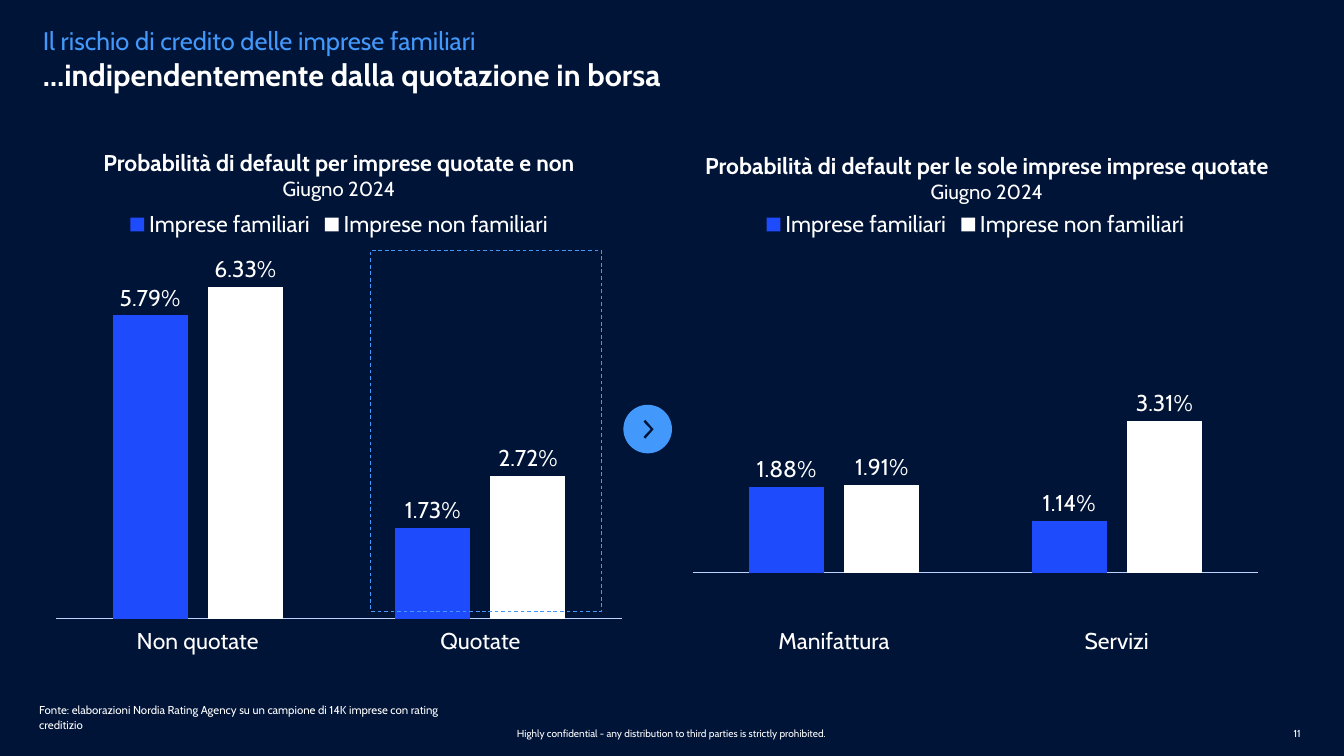
from pptx import Presentation
from pptx.chart.data import CategoryChartData
from pptx.dml.color import RGBColor
from pptx.enum.chart import (XL_CHART_TYPE, XL_LABEL_POSITION, XL_LEGEND_POSITION,
                             XL_TICK_LABEL_POSITION, XL_TICK_MARK)
from pptx.enum.dml import MSO_LINE
from pptx.enum.shapes import MSO_SHAPE
from pptx.enum.text import MSO_ANCHOR, MSO_AUTO_SIZE, PP_ALIGN
from pptx.util import Cm, Pt

NAVY = RGBColor(0x00, 0x14, 0x37)
SKY = RGBColor(0x43, 0x99, 0xFB)
BLUE = RGBColor(0x1E, 0x4C, 0xFC)
PALE = RGBColor(0xBB, 0xD4, 0xFF)
WHITE = RGBColor(0xFF, 0xFF, 0xFF)
FONT = "Cabin"
CHART_TOP, CHART_WIDTH, CHART_HEIGHT = 5.54, 16.36, 12.93


def style(font, size, color=WHITE, bold=False):
    font.name = FONT
    font.size = Pt(size)
    font.bold = bold
    font.color.rgb = color


def place(shape, left, top, width, height):
    shape.left, shape.top = Cm(left), Cm(top)
    shape.width, shape.height = Cm(width), Cm(height)


def clear_margins(frame):
    frame.margin_left = frame.margin_right = 0
    frame.margin_top = frame.margin_bottom = 0


def add_text(slide, box, text, sizes, color=WHITE, align=PP_ALIGN.LEFT,
             anchor=MSO_ANCHOR.TOP, inset=False, spacing=None):
    """Write one paragraph per size; the first of several is bold."""
    frame = slide.shapes.add_textbox(*map(Cm, box)).text_frame
    frame.word_wrap = True
    frame.vertical_anchor = anchor
    if not inset:
        clear_margins(frame)
    frame.text = text
    for index, (paragraph, size) in enumerate(zip(frame.paragraphs, sizes)):
        paragraph.alignment = align
        paragraph.line_spacing = spacing
        style(paragraph.runs[0].font, size, color, len(sizes) > 1 and index == 0)


def add_title(slide, text):
    title = slide.shapes.title
    place(title, 1.19, 1.55, 25, 0.89)
    frame = title.text_frame
    frame.text = text
    frame.word_wrap = False
    frame.auto_size = MSO_AUTO_SIZE.NONE
    frame.vertical_anchor = MSO_ANCHOR.TOP
    clear_margins(frame)
    frame.paragraphs[0].alignment = PP_ALIGN.LEFT
    style(frame.paragraphs[0].runs[0].font, 24, bold=True)


def add_columns(slide, left, groups, family, others, low):
    data = CategoryChartData(number_format="0.00%")
    data.categories = groups
    data.add_series("Imprese familiari", family)
    data.add_series("Imprese non familiari", others)
    chart = slide.shapes.add_chart(
        XL_CHART_TYPE.COLUMN_CLUSTERED, Cm(left), Cm(CHART_TOP),
        Cm(CHART_WIDTH), Cm(CHART_HEIGHT), data).chart
    style(chart.font, 18)
    chart.has_title = False
    chart.has_legend = True
    chart.legend.position = XL_LEGEND_POSITION.TOP
    chart.legend.include_in_layout = False
    style(chart.legend.font, 18)

    value = chart.value_axis
    value.minimum_scale, value.maximum_scale = low, 0.07
    value.has_major_gridlines = False
    value.visible = False
    category = chart.category_axis
    category.major_tick_mark = XL_TICK_MARK.NONE
    category.tick_label_position = XL_TICK_LABEL_POSITION.LOW
    category.format.line.color.rgb = PALE
    category.format.line.width = Pt(0.75)
    style(category.tick_labels.font, 18)

    plot = chart.plots[0]
    plot.gap_width, plot.overlap = 150, -27
    plot.vary_by_categories = False
    for series, color in zip(plot.series, (BLUE, WHITE)):
        series.invert_if_negative = False
        series.format.fill.solid()
        series.format.fill.fore_color.rgb = color
        labels = series.data_labels
        labels.show_value = True
        labels.position = XL_LABEL_POSITION.OUTSIDE_END
        labels.number_format = "0.00%"
        labels.number_format_is_linked = False
        style(labels.font, 18)


def fill_plain(shape, color):
    shape.shadow.inherit = False
    shape.fill.solid()
    shape.fill.fore_color.rgb = color
    shape.line.fill.background()


def add_arrow(slide):
    """Draw the round badge with its chevron pointing right."""
    badge = slide.shapes.add_shape(
        MSO_SHAPE.ROUNDED_RECTANGLE, Cm(17.32), Cm(11.25), Cm(1.35), Cm(1.35))
    badge.adjustments[0] = 0.5
    fill_plain(badge, SKY)
    x, y = 17.88, 11.93
    points = [(x + dx, y + dy) for dx, dy in (
        (0.28, 0), (0.05, 0.26), (0, 0.21), (0.2, 0), (0, -0.21), (0.05, -0.26))]
    points = [(Cm(px), Cm(py)) for px, py in points]
    outline = slide.shapes.build_freeform(*points[0])
    outline.add_line_segments(points[1:], close=True)
    fill_plain(outline.convert_to_shape(), NAVY)


def add_frame(slide):
    frame = slide.shapes.add_shape(
        MSO_SHAPE.RECTANGLE, Cm(10.29), Cm(6.96), Cm(6.43), Cm(10.03))
    frame.shadow.inherit = False
    frame.fill.background()
    frame.line.color.rgb = SKY
    frame.line.width = Pt(0.75)
    frame.line.dash_style = MSO_LINE.DASH


def main():
    deck = Presentation()
    deck.slide_width, deck.slide_height = Cm(37.34), Cm(21.01)
    slide = deck.slides.add_slide(deck.slide_layouts[5])
    slide.background.fill.solid()
    slide.background.fill.fore_color.rgb = NAVY

    add_text(slide, (1.19, 0.71, 25, 0.84),
             "Il rischio di credito delle imprese familiari", [20], SKY,
             anchor=MSO_ANCHOR.BOTTOM, spacing=1.1)
    add_title(slide, "…indipendentemente dalla quotazione in borsa")

    add_columns(slide, 1.24, ["Non quotate", "Quotate"],
                (0.0579, 0.0173), (0.0633, 0.0272), 0)
    add_columns(slide, 18.92, ["Manifattura", "Servizi"],
                (0.0188, 0.0114), (0.0191, 0.0331), -0.01)
    for box, heading in (
            ((1.24, 4.01, 16.36, 1.7),
             "Probabilità di default per imprese quotate e non"),
            ((18.95, 4.09, 16.94, 1.7),
             "Probabilità di default per le sole imprese imprese quotate")):
        add_text(slide, box, heading + "\nGiugno 2024", [18, 16],
                 align=PP_ALIGN.CENTER, inset=True)

    add_arrow(slide)
    add_frame(slide)
    add_text(slide, (0.84, 19.38, 12.47, 1.09),
             "Fonte: elaborazioni Nordia Rating Agency su un campione di 14K "
             "imprese con rating creditizio", [9], inset=True, spacing=1.1)
    add_text(slide, (8.86, 20.27, 19.61, 0.28),
             "Highly confidential - any distribution to third parties is "
             "strictly prohibited.", [8], align=PP_ALIGN.CENTER,
             anchor=MSO_ANCHOR.MIDDLE, spacing=0.9)
    add_text(slide, (34.26, 20.27, 1.88, 0.28), "11", [8],
             align=PP_ALIGN.RIGHT, anchor=MSO_ANCHOR.MIDDLE, spacing=0.9)
    deck.save("out.pptx")


if __name__ == "__main__":
    main()
